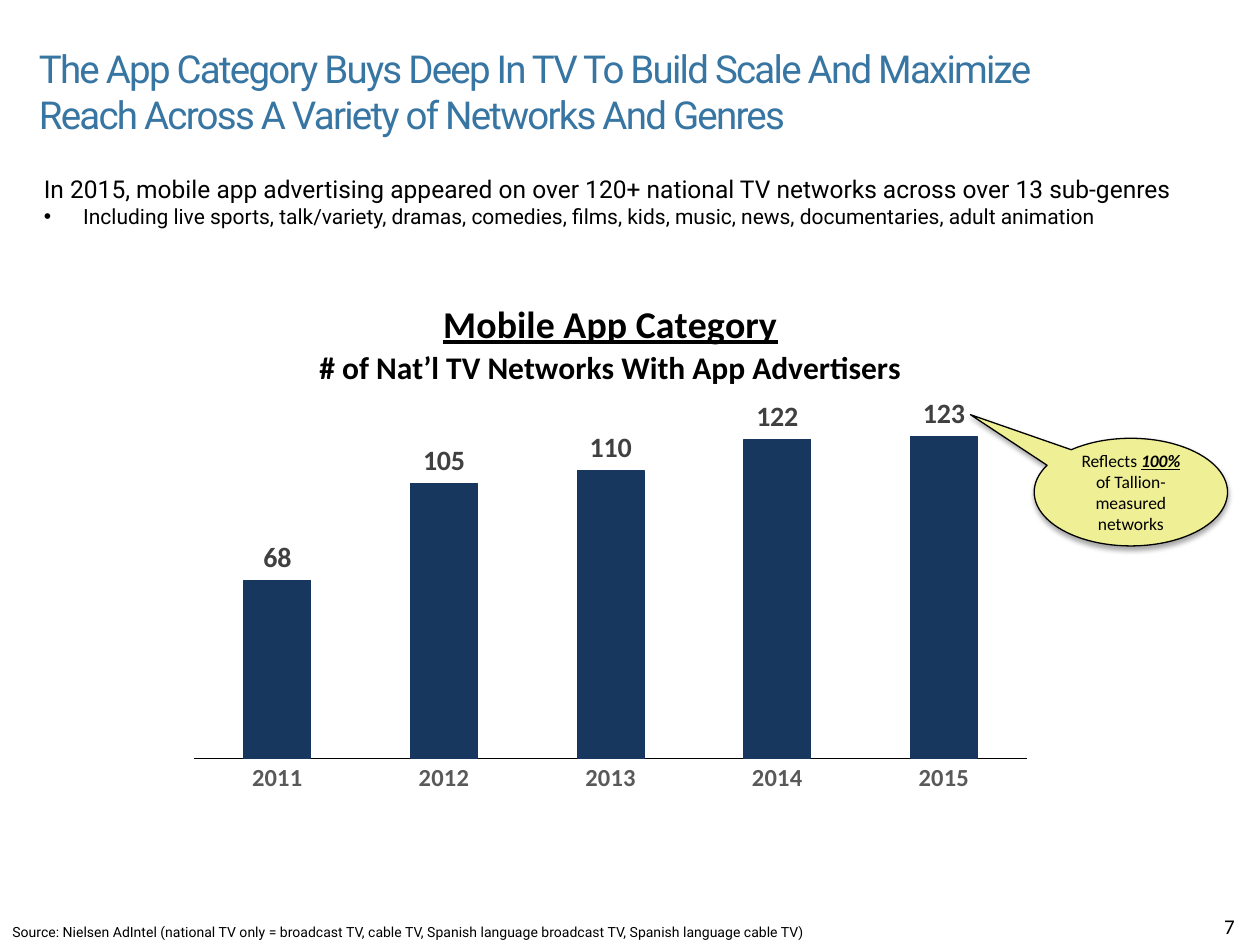
from dataclasses import dataclass

import pptx
import pptx.chart.data
import pptx.dml.color
import pptx.enum.chart
import pptx.enum.shapes
import pptx.enum.text
import pptx.oxml
import pptx.oxml.ns
import pptx.util
from lxml import etree

Pt = pptx.util.Pt
Align = pptx.enum.text.PP_ALIGN
Anchor = pptx.enum.text.MSO_ANCHOR
Fit = pptx.enum.text.MSO_AUTO_SIZE
qn = pptx.oxml.ns.qn

BLACK = "000000"
NAVY = "17375E"


@dataclass
class Line:
    text: str
    size: float
    bullet: bool = False


@dataclass
class Box:
    left: float
    top: float
    width: float
    height: float
    font: str
    lines: list[Line]


BOXES = [
    Box(0, 524, 720, 17, "Roboto", [
        Line("Source: Nielsen AdIntel (national TV only = broadcast TV, cable TV, "
             "Spanish language broadcast TV, Spanish language cable TV)", 8)]),
    Box(18, 96, 684, 39, "Roboto", [
        Line("In 2015, mobile app advertising appeared on over 120+ national TV "
             "networks across over 13 sub-genres", 14),
        Line("Including live sports, talk/variety, dramas, comedies, films, kids, "
             "music, news, documentaries, adult animation", 12, True)]),
    Box(692.5, 518.5, 27.5, 21.5, "Calibri", [Line("7", 12)]),
]


def tint(hue: str) -> pptx.dml.color.RGBColor:
    return pptx.dml.color.RGBColor.from_string(hue)


def style(font, size: float, face: str, hue: str = BLACK, bold: bool = False,
          slant: bool = False, under: bool = False) -> None:
    font.size = Pt(size)
    font.name = face
    font.color.rgb = tint(hue)
    font.bold = bold
    font.italic = slant
    font.underline = under


def write(para, text: str, **form):
    run = para.add_run()
    run.text = text
    style(run.font, **form)
    return run


def edge(line, hue: str) -> None:
    line.color.rgb = tint(hue)
    line.width = Pt(0.75)


def mark(para) -> None:
    props = para._p.get_or_add_pPr()
    props.set("marL", str(Pt(22.5)))
    props.set("indent", str(-Pt(22.5)))
    etree.SubElement(props, qn("a:buFont")).set("typeface", "Arial")
    etree.SubElement(props, qn("a:buChar")).set("char", "•")


def add_box(slide, box: Box) -> None:
    shape = slide.shapes.add_textbox(
        Pt(box.left), Pt(box.top), Pt(box.width), Pt(box.height))
    frame = shape.text_frame
    frame.word_wrap = True
    frame.auto_size = Fit.SHAPE_TO_FIT_TEXT
    for rank, line in enumerate(box.lines):
        para = frame.add_paragraph() if rank else frame.paragraphs[0]
        if line.bullet:
            mark(para)
        write(para, line.text, size=line.size, face=box.font)


def add_title(slide) -> None:
    title = slide.shapes.title
    title.left, title.top = Pt(15), Pt(18)
    title.width, title.height = Pt(602), Pt(68.5)
    frame = title.text_frame
    frame.word_wrap = True
    frame.auto_size = Fit.NONE
    frame.vertical_anchor = Anchor.MIDDLE
    para = frame.paragraphs[0]
    para.alignment = Align.LEFT
    run = write(para, "The App Category Buys Deep In TV To Build Scale And Maximize "
                "Reach Across A Variety of Networks And Genres",
                size=22, face="Roboto", hue="3775A2")
    run.font._element.set("spc", "-100")


def place(node, inner: bool = False, **spots: float) -> None:
    old = node.find(qn("c:layout"))
    if old is None:
        old = pptx.oxml.parse_xml(
            '<c:layout xmlns:c="http://schemas.openxmlformats.org/drawingml/2006/chart"/>')
        text = node.find(qn("c:tx"))
        if text is None:
            node.insert(0, old)
        else:
            text.addnext(old)
    for child in list(old):
        old.remove(child)
    manual = etree.SubElement(old, qn("c:manualLayout"))
    if inner:
        etree.SubElement(manual, qn("c:layoutTarget")).set("val", "inner")
    for side in "xy":
        etree.SubElement(manual, qn(f"c:{side}Mode")).set("val", "edge")
    for key, spot in spots.items():
        etree.SubElement(manual, qn(f"c:{key}")).set("val", str(spot))


def add_chart(slide) -> None:
    data = pptx.chart.data.CategoryChartData()
    data.categories = ["2011", "2012", "2013", "2014", "2015"]
    data.add_series("Series 1", [68, 105, 110, 122, 123])
    kinds = pptx.enum.chart
    chart = slide.shapes.add_chart(
        kinds.XL_CHART_TYPE.COLUMN_CLUSTERED,
        Pt(101), Pt(153.5), Pt(496), Pt(307.5), data).chart
    style(chart.font, 10, "Calibri")
    chart.has_legend = False

    chart.has_title = True
    title = chart.chart_title
    title.include_in_layout = False
    frame = title.text_frame
    write(frame.paragraphs[0], "Mobile App Category",
          size=21.6, face="Calibri", bold=True, under=True)
    write(frame.add_paragraph(), "# of Nat’l TV Networks With App Advertisers",
          size=18, face="Calibri", bold=True)
    place(title._element, x=0.16, y=0.05)

    cats = chart.category_axis
    cats.major_tick_mark = kinds.XL_TICK_MARK.NONE
    cats.has_major_gridlines = False
    style(cats.tick_labels.font, 14, "Calibri", "595959", True)
    edge(cats.format.line, BLACK)
    vals = chart.value_axis
    vals.minimum_scale, vals.maximum_scale = 0, 140
    vals.has_major_gridlines = False
    vals.visible = False

    plot = chart.plots[0]
    plot.gap_width = 150
    plot.vary_by_categories = False
    place(plot._element.getparent(), True, x=0.02, y=0.23, w=0.96, h=0.68)
    bars = plot.series[0]
    bars.format.fill.solid()
    bars.format.fill.fore_color.rgb = tint(NAVY)
    edge(bars.format.line, NAVY)
    labels = bars.data_labels
    labels.show_value = True
    labels.position = kinds.XL_LABEL_POSITION.OUTSIDE_END
    style(labels.font, 16, "Calibri", "404040", True)


def shade(shape) -> None:
    shape.shadow.inherit = False
    effects = shape._element.spPr.find(qn("a:effectLst"))
    cast = etree.SubElement(effects, qn("a:outerShdw"), blurRad=str(Pt(3.1)),
                            dist=str(Pt(1.8)), dir="5400000", rotWithShape="0")
    color = etree.SubElement(cast, qn("a:srgbClr"), val=BLACK)
    etree.SubElement(color, qn("a:alpha"), val="35000")


def add_note(slide) -> None:
    note = slide.shapes.add_shape(
        pptx.enum.shapes.MSO_SHAPE.OVAL_CALLOUT,
        Pt(591), Pt(250.5), Pt(110.5), Pt(61.5))
    note.adjustments[0], note.adjustments[1] = -0.83, -0.72
    note.fill.solid()
    note.fill.fore_color.rgb = tint("EFEF96")
    edge(note.line, BLACK)
    shade(note)
    frame = note.text_frame
    frame.word_wrap = True
    frame.vertical_anchor = Anchor.MIDDLE
    para = frame.paragraphs[0]
    para.alignment = Align.CENTER
    form = dict(size=10, face="Calibri")
    write(para, "Reflects ", **form)
    write(para, "100%", bold=True, slant=True, under=True, **form)
    write(para, " of Tallion-measured networks", **form)


def main() -> None:
    deck = pptx.Presentation()
    deck.slide_width, deck.slide_height = Pt(720), Pt(540)
    slide = deck.slides.add_slide(deck.slide_layouts[5])
    add_title(slide)
    for box in BOXES:
        add_box(slide, box)
    add_chart(slide)
    add_note(slide)
    deck.save("out.pptx")


if __name__ == "__main__":
    main()
